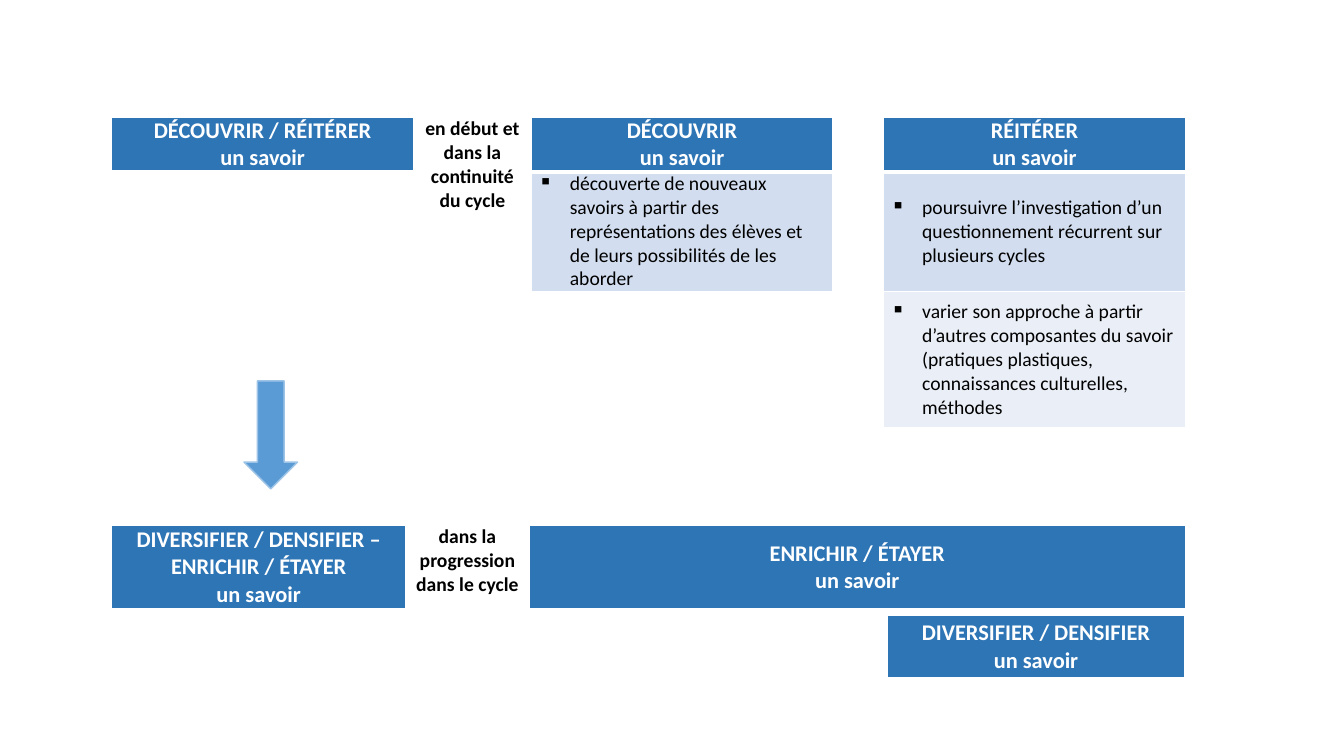
from pptx import Presentation, oxml
from pptx import util as u
from pptx.dml import color
from pptx.enum import shapes, text
from pptx.oxml import ns

WHITE, BLACK, BLUE = "FFFFFF", "000000", "2E75B6"
LIGHT, PALE = "D2DEEF", "EAEFF7"
LEFT = 2.82


def rgb(value):
    return color.RGBColor.from_string(value)


def apply(target, values):
    for name, value in values.items():
        setattr(target, name, value)


def element(xml):
    head, tail = xml.split(" ", 1)
    return oxml.parse_xml(f"{head} {ns.nsdecls('a')} {tail}")


def heading(*lines):
    return {"kind": "heading", "fill": BLUE, "lines": [*lines, "un savoir"]}


def note(line):
    return {"kind": "note", "fill": WHITE, "lines": [line]}


def bullet(line, fill):
    return {"kind": "bullet", "fill": fill, "lines": [line]}


class SlideBuilder:
    fonts = {
        "heading": {"size": u.Pt(16), "bold": True},
        "note": {"size": u.Pt(14), "bold": True},
        "bullet": {"size": u.Pt(14), "bold": False},
    }
    ink = {"heading": WHITE, "note": BLACK, "bullet": BLACK}
    alignment = {
        "heading": text.PP_ALIGN.CENTER,
        "note": text.PP_ALIGN.CENTER,
        "bullet": text.PP_ALIGN.LEFT,
    }
    margins = {
        "margin_left": u.Cm(0.18), "margin_right": u.Cm(0.18),
        "margin_top": 0, "margin_bottom": 0,
    }

    def __init__(self, presentation):
        self.slide = presentation.slides.add_slide(presentation.slide_layouts[6])

    def borders(self, cell, top, bottom):
        properties = cell._tc.get_or_add_tcPr()
        for side, width in (("L", 1), ("R", 1), ("T", top), ("B", bottom)):
            properties.append(element(
                f'<a:ln{side} w="{u.Pt(width)}"><a:solidFill>'
                f'<a:srgbClr val="{WHITE}"/></a:solidFill></a:ln{side}>'))

    def bullet_mark(self, paragraph):
        properties = paragraph._p.get_or_add_pPr()
        indent = u.Cm(0.79)
        properties.set("marL", str(indent))
        properties.set("indent", str(-indent))
        properties.append(element('<a:buChar char="▪"/>'))

    def cell_text(self, cell, content):
        kind = content["kind"]
        top = kind == "note"
        cell.vertical_anchor = text.MSO_ANCHOR.TOP if top else text.MSO_ANCHOR.MIDDLE
        frame = cell.text_frame
        for index, line in enumerate(content["lines"]):
            paragraph = frame.add_paragraph() if index else frame.paragraphs[0]
            paragraph.alignment = self.alignment[kind]
            if kind == "bullet":
                self.bullet_mark(paragraph)
            run = paragraph.add_run()
            run.text = line
            apply(run.font, {"name": "Calibri", **self.fonts[kind]})
            run.font.color.rgb = rgb(self.ink[kind])

    def table(self, left, top, widths, heights, rows, merges=()):
        frame = self.slide.shapes.add_table(
            len(heights), len(widths), u.Cm(left), u.Cm(top),
            u.Cm(sum(widths)), u.Cm(sum(heights)))
        table = frame.table
        apply(table, {"first_row": False, "horz_banding": False})
        for column, width in zip(table.columns, widths):
            column.width = u.Cm(width)
        for row, height in zip(table.rows, heights):
            row.height = u.Cm(height)
        for row, contents in enumerate(rows):
            for column, content in enumerate(contents):
                cell = table.cell(row, column)
                apply(cell, self.margins)
                self.borders(cell, 3 if row == 1 else 1, 1 if row else 3)
                cell.fill.solid()
                cell.fill.fore_color.rgb = rgb(content["fill"] if content else WHITE)
                if content:
                    self.cell_text(cell, content)
        for first, last in merges:
            table.cell(*first).merge(table.cell(*last))

    def down_arrow(self, left, top, width, height):
        shape = self.slide.shapes.add_shape(
            shapes.MSO_SHAPE.DOWN_ARROW, *map(u.Cm, (left, top, width, height)))
        shape.shadow.inherit = False
        shape.fill.solid()
        shape.fill.fore_color.rgb = rgb("5B9BD5")
        shape.line.color.rgb = rgb("9DC3E6")
        shape.line.width = u.Pt(1)


def main():
    presentation = Presentation()
    apply(presentation, {"slide_width": u.Cm(33.87), "slide_height": u.Cm(19.05)})
    builder = SlideBuilder(presentation)

    discovery = bullet(
        "découverte de nouveaux savoirs à partir des représentations des élèves "
        "et de leurs possibilités de les aborder", LIGHT)
    inquiry = bullet(
        "poursuivre l’investigation d’un questionnement récurrent "
        "sur plusieurs cycles", LIGHT)
    variation = bullet(
        "varier son approche à partir d’autres composantes du savoir "
        "(pratiques plastiques, connaissances culturelles, méthodes", PALE)
    builder.table(
        LEFT, 2.95, [7.6, 2.97, 7.6, 1.28, 7.6], [1.24, 2.21, 3.45],
        [
            [heading("DÉCOUVRIR / RÉITÉRER"),
             note("en début et dans la continuité du cycle"),
             heading("DÉCOUVRIR"), None, heading("RÉITÉRER")],
            [None, None, discovery, None, inquiry],
            [None, None, None, None, variation],
        ],
        [((0, 1), (2, 1)), ((0, 3), (2, 3)), ((1, 0), (2, 0))])
    builder.down_arrow(6.15, 9.6, 1.35, 2.72)
    builder.table(
        LEFT, 13.23, [7.4, 3.12, 16.53], [2.13],
        [[heading("DIVERSIFIER / DENSIFIER – ENRICHIR / ÉTAYER"),
          note("dans la progression dans le cycle"),
          heading("ENRICHIR / ÉTAYER")]])
    builder.table(22.36, 15.5, [7.5], [1.6], [[heading("DIVERSIFIER / DENSIFIER")]])
    presentation.save("out.pptx")


if __name__ == "__main__":
    main()
